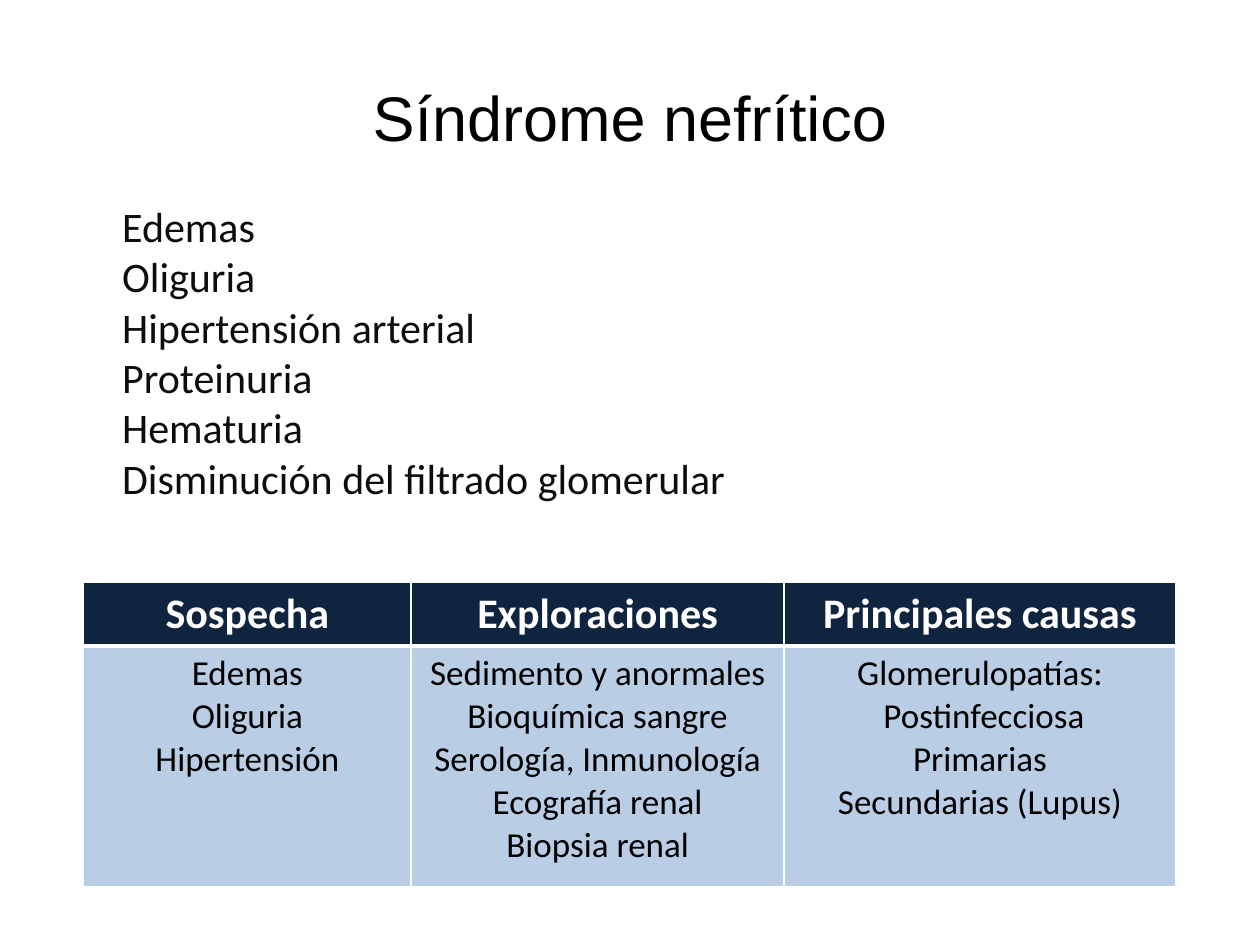
from lxml.etree import SubElement
from pptx import Presentation
from pptx.dml.color import RGBColor
from pptx.enum.text import MSO_ANCHOR, MSO_AUTO_SIZE, PP_ALIGN
from pptx.oxml.ns import qn
from pptx.util import Pt

# Content
TITLE = "Síndrome nefrítico"
SIGNS = ["Edemas", "Oliguria", "Hipertensión arterial", "Proteinuria",
         "Hematuria", "Disminución del filtrado glomerular"]
# heading, column width, entries
COLUMNS = [
    ("Sospecha", 187.2, ["Edemas", "Oliguria", "Hipertensión"]),
    ("Exploraciones", 213.1, ["Sedimento y anormales", "Bioquímica sangre",
                              "Serología, Inmunología", "Ecografía renal",
                              "Biopsia renal"]),
    ("Principales causas", 223.9, ["Glomerulopatías:", " Postinfecciosa",
                                   "Primarias", "Secundarias (Lupus)"]),
]
HEADER_HEIGHT, ENTRIES_HEIGHT = 36, 137.5


def rgb(color):
    return RGBColor.from_string(color)


def place(shape, left, top, width, height):
    shape.left, shape.top = Pt(left), Pt(top)
    shape.width, shape.height = Pt(width), Pt(height)


def write(frame, lines, size, color, align, font="Calibri", bold=False):
    frame.text = "\n".join(lines)
    for paragraph in frame.paragraphs:
        paragraph.alignment = align
        paragraph.font.name = font
        paragraph.font.size = Pt(size)
        paragraph.font.bold = bold
        paragraph.font.color.rgb = rgb(color)


def add_borders(cell, bottom=1):
    properties = cell._tc.get_or_add_tcPr()
    for side, width in (("L", 1), ("R", 1), ("T", 1), ("B", bottom)):
        line = SubElement(properties, qn(f"a:ln{side}"), w=str(Pt(width)))
        fill = SubElement(line, qn("a:solidFill"))
        SubElement(fill, qn("a:srgbClr"), val="FFFFFF")


def fill_cell(cell, lines, size, color, background, bold, bottom):
    write(cell.text_frame, lines, size, color, PP_ALIGN.CENTER, bold=bold)
    add_borders(cell, bottom)
    cell.fill.solid()
    cell.fill.fore_color.rgb = rgb(background)


deck = Presentation()
deck.slide_width, deck.slide_height = Pt(720), Pt(540)
slide = deck.slides.add_slide(deck.slide_layouts[1])

# Title
title = slide.shapes.title
place(title, 36, 21.6, 648, 90)
title.text_frame.vertical_anchor = MSO_ANCHOR.MIDDLE
write(title.text_frame, [TITLE], 36, "000000", PP_ALIGN.CENTER, font="Arial")

# List of signs, without bullets
signs = slide.placeholders[1]
place(signs, 62.6, 110.9, 609.8, 145.4)
signs.text_frame.auto_size = MSO_AUTO_SIZE.NONE
write(signs.text_frame, SIGNS, 24, "0D0D0D", PP_ALIGN.JUSTIFY)
for paragraph in signs.text_frame.paragraphs:
    paragraph.space_before = Pt(0)
    paragraph.line_spacing = Pt(28.8)
    properties = paragraph._p.get_or_add_pPr()
    properties.set("marL", "0")
    properties.set("indent", "0")
    SubElement(properties, qn("a:buNone"))
    # bullets come before the default run properties
    properties.append(properties.find(qn("a:defRPr")))

# Table of suspicion, tests and causes
table = slide.shapes.add_table(
    2, len(COLUMNS), Pt(47.8), Pt(332.6),
    Pt(sum(width for _, width, _ in COLUMNS)),
    Pt(HEADER_HEIGHT + ENTRIES_HEIGHT)).table
table.rows[0].height = Pt(HEADER_HEIGHT)
table.rows[1].height = Pt(ENTRIES_HEIGHT)
for index, (heading, width, entries) in enumerate(COLUMNS):
    table.columns[index].width = Pt(width)
    fill_cell(table.cell(0, index), [heading], 24, "FFFFFF", "0F243E", True, 3)
    fill_cell(table.cell(1, index), entries, 20, "000000", "B9CDE5", False, 1)
    table.cell(1, index)._tc.tcPr.find(qn("a:lnT")).set("w", str(Pt(3)))

deck.save("out.pptx")
